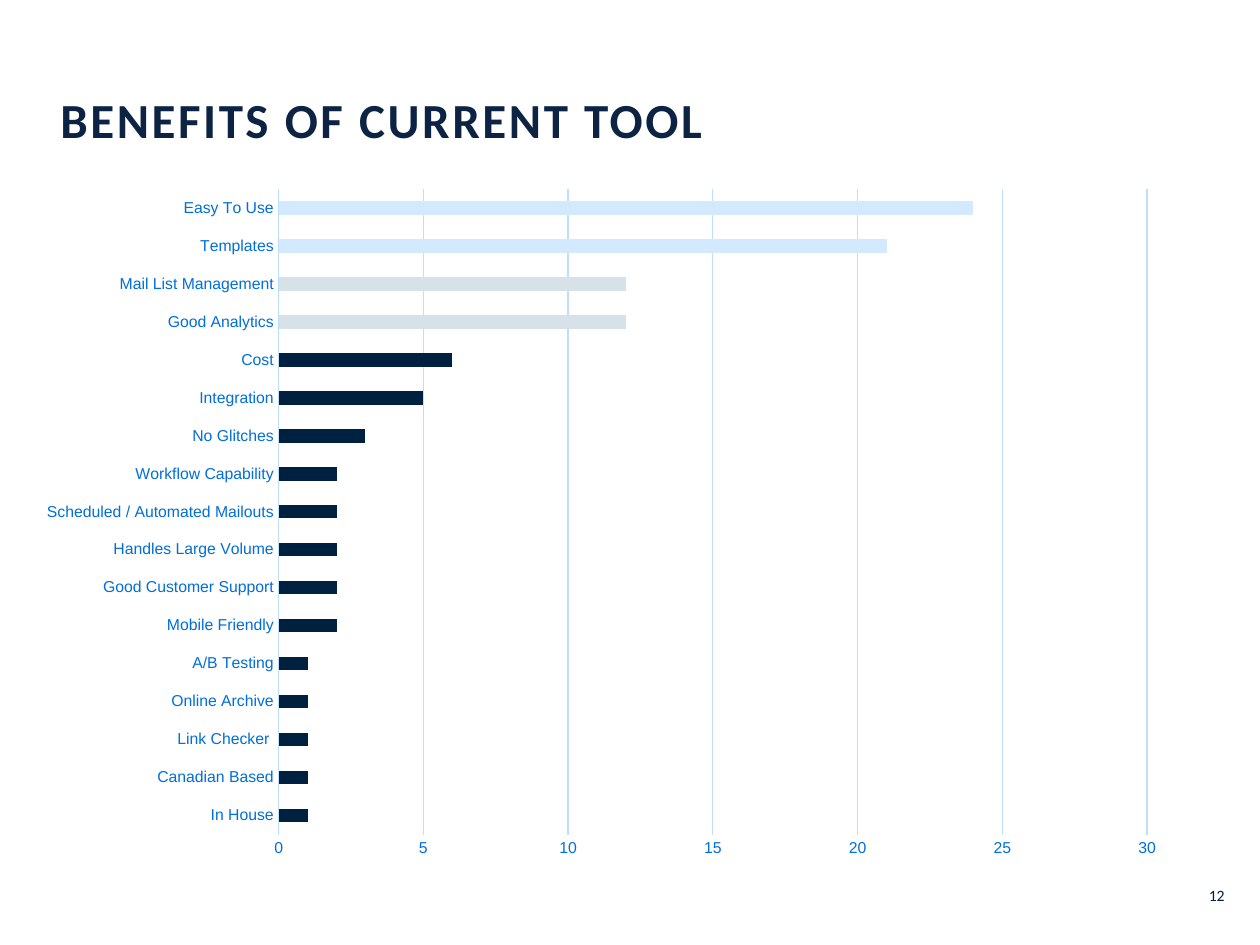
import pptx
import pptx.chart.data
import pptx.dml.color
import pptx.enum.chart
import pptx.enum.text
import pptx.oxml
import pptx.oxml.ns
import pptx.util
from pptx.util import Inches


def rgb(value):
    return pptx.dml.color.RGBColor.from_string(value)


def set_font(font, name, size, color):
    font.name = name
    font.size = pptx.util.Pt(size)
    font.color.rgb = rgb(color)


NAVY, BLUE, PALE, GREY, GRID = "002040", "006EDC", "D2E9FF", "D7E2E8", "BCDEFF"

prs = pptx.Presentation()
prs.slide_width = Inches(10)
prs.slide_height = Inches(7.5)
s = prs.slides.add_slide(prs.slide_layouts[5])

title = s.shapes.title
title.left, title.top = Inches(0.48), Inches(0.69)
title.width, title.height = Inches(8.61), Inches(0.68)
tf = title.text_frame
tf.text = "BENEFITS OF CURRENT TOOL"
tf.word_wrap = True
tf.auto_size = pptx.enum.text.MSO_AUTO_SIZE.NONE
tf.vertical_anchor = pptx.enum.text.MSO_ANCHOR.MIDDLE
tf.margin_left = tf.margin_right = tf.margin_top = tf.margin_bottom = 0
p = tf.paragraphs[0]
p.alignment = pptx.enum.text.PP_ALIGN.LEFT
p.line_spacing = pptx.util.Pt(21)
set_font(p.font, "Calibri", 28, "0C2344")
p.font.bold = True
p.runs[0].font._element.set("spc", "150")

benefits = [
    ("In House", 1),
    ("Canadian Based", 1),
    ("Link Checker ", 1),
    ("Online Archive", 1),
    ("A/B Testing", 1),
    ("Mobile Friendly", 2),
    ("Good Customer Support", 2),
    ("Handles Large Volume", 2),
    ("Scheduled / Automated Mailouts", 2),
    ("Workflow Capability", 2),
    ("No Glitches", 3),
    ("Integration", 5),
    ("Cost", 6),
    ("Good Analytics", 12),
    ("Mail List Management", 12),
    ("Templates", 21),
    ("Easy To Use", 24),
]
data = pptx.chart.data.CategoryChartData()
data.categories = [name for name, count in benefits]
data.add_series("Series 1", [count for name, count in benefits])
chart = s.shapes.add_chart(
    pptx.enum.chart.XL_CHART_TYPE.BAR_CLUSTERED,
    Inches(0.19), Inches(1.39), Inches(9.19), Inches(5.51), data).chart
chart.has_legend = False
chart.has_title = False
set_font(chart.font, "Arial", 10, NAVY)

plot = chart.plots[0]
plot.gap_width = 182
plot.vary_by_categories = False
series = plot.series[0]
series.format.fill.solid()
series.format.fill.fore_color.rgb = rgb(NAVY)
for i, (name, count) in enumerate(benefits):
    if count >= 12:
        fill = series.points[i].format.fill
        fill.solid()
        fill.fore_color.rgb = rgb(PALE if count > 20 else GREY)

for axis in (chart.category_axis, chart.value_axis):
    axis.major_tick_mark = pptx.enum.chart.XL_TICK_MARK.NONE
    axis.minor_tick_mark = pptx.enum.chart.XL_TICK_MARK.NONE
    set_font(axis.tick_labels.font, "Arial", 9, BLUE)
chart.category_axis.has_major_gridlines = False
value_axis = chart.value_axis
value_axis.minimum_scale, value_axis.maximum_scale = 0, 30
value_axis.major_unit = 5
value_axis.has_major_gridlines = True
value_axis.format.line.fill.background()
for line in (chart.category_axis.format.line, value_axis.major_gridlines.format.line):
    line.color.rgb = rgb(GRID)
    line.width = pptx.util.Pt(0.75)

plot_area = chart._chartSpace.chart.plotArea
for old in plot_area.findall(pptx.oxml.ns.qn("c:layout")):
    plot_area.remove(old)
plot_area.insert(0, pptx.oxml.parse_xml(
    f'<c:layout {pptx.oxml.ns.nsdecls("c")}><c:manualLayout>'
    '<c:layoutTarget val="inner"/><c:xMode val="edge"/><c:yMode val="edge"/>'
    '<c:x val="0.22"/><c:y val="0.02"/><c:w val="0.75"/><c:h val="0.93"/>'
    '</c:manualLayout></c:layout>'))

number = s.shapes.add_textbox(Inches(9.39), Inches(7.03), Inches(0.33), Inches(0.21))
tf = number.text_frame
tf.word_wrap = True
tf.margin_left = tf.margin_right = tf.margin_top = tf.margin_bottom = 0
p = tf.paragraphs[0]
p.text = "12"
p.alignment = pptx.enum.text.PP_ALIGN.RIGHT
set_font(p.font, "Calibri", 9, NAVY)

prs.save("out.pptx")
